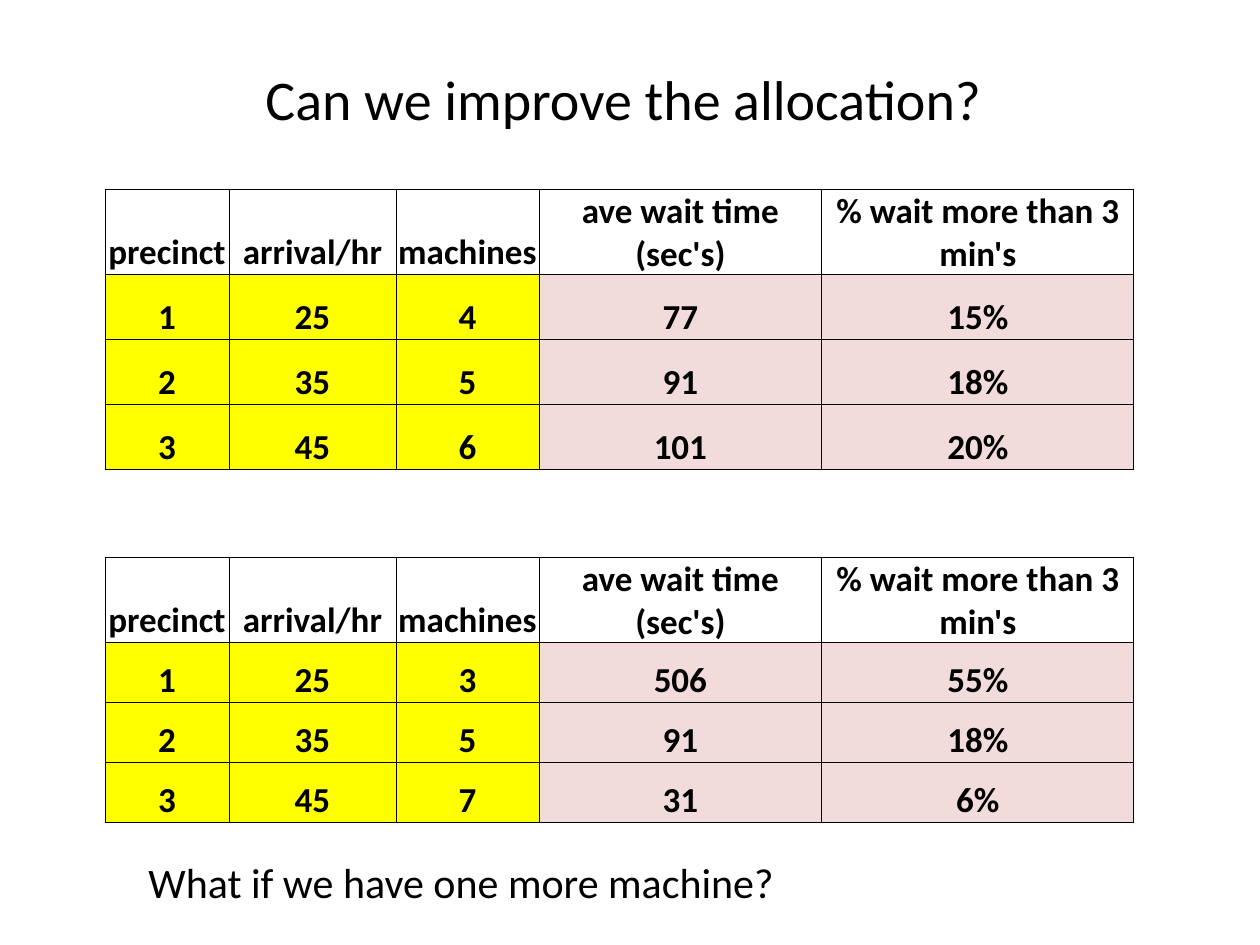
"""Build a slide comparing two allocations of voting machines."""
import pptx
import pptx.dml.color
import pptx.enum.text
import pptx.oxml
import pptx.oxml.ns
import pptx.util

PX = 914400 / 126
HUES = {"ink": "000000", "given": "FFFF00", "found": "F2DCDB"}
ALIGN = pptx.enum.text.PP_ALIGN
ANCHOR = pptx.enum.text.MSO_ANCHOR


def px(*nums):
    """Turn pixels into EMU."""
    return [pptx.util.Emu(round(num * PX)) for num in nums]


def write(frame, text, size, bold=False, align=ALIGN.CENTER):
    """Put one formatted line of text in a frame."""
    para = frame.paragraphs[0]
    para.alignment = align
    run = para.add_run()
    run.text = text
    look = {"name": "Calibri", "size": pptx.util.Pt(size), "bold": bold}
    for key, val in look.items():
        setattr(run.font, key, val)
    run.font.color.rgb = pptx.dml.color.RGBColor.from_string(HUES["ink"])


deck = pptx.Presentation()
deck.slide_width, deck.slide_height = px(1260, 945)
slide = deck.slides.add_slide(deck.slide_layouts[5])

title = slide.shapes.title
title.left, title.top, title.width, title.height = px(63, 38, 1134, 120)
title.text_frame.vertical_anchor = ANCHOR.MIDDLE
write(title.text_frame, "Can we improve the allocation? ", 32)

note = slide.shapes.add_textbox(*px(136, 850, 777, 63))
note.text_frame.word_wrap = True
write(note.text_frame, "What if we have one more machine?", 24, align=ALIGN.LEFT)

heads = ["precinct", "arrival/hr", "machines", "ave wait time (sec's)",
         "% wait more than 3 min's"]
widths = [124, 167, 143, 283, 312]
head_high = 85
plans = [
    (189, 65, [["1", "25", "4", "77", "15%"],
               ["2", "35", "5", "91", "18%"],
               ["3", "45", "6", "101", "20%"]]),
    (557, 60, [["1", "25", "3", "506", "55%"],
               ["2", "35", "5", "91", "18%"],
               ["3", "45", "7", "31", "6%"]]),
]
edge, foot = px(1, 0)
inset = {"margin_left": edge, "margin_right": edge, "margin_top": edge,
         "margin_bottom": foot, "vertical_anchor": ANCHOR.BOTTOM}
line = ('<a:{} {} w="6350"><a:solidFill><a:srgbClr val="{}"/>'
        '</a:solidFill></a:{}>')

for top, high, rows in plans:
    full = head_high + high * len(rows)
    size = px(105, top, sum(widths), full)
    grid = slide.shapes.add_table(len(rows) + 1, len(heads), *size).table
    grid.first_row = grid.horz_banding = False
    for col, width in zip(grid.columns, px(*widths)):
        col.width = width
    for row, tall in zip(grid.rows, px(head_high, *[high] * len(rows))):
        row.height = tall
    for r, texts in enumerate([heads] + rows):
        for c, text in enumerate(texts):
            cell = grid.cell(r, c)
            for key, val in inset.items():
                setattr(cell, key, val)
            write(cell.text_frame, text, 20, bold=True)
            if r == 0:
                cell.fill.background()
            else:
                cell.fill.solid()
                hue = HUES["given" if c < 3 else "found"]
                cell.fill.fore_color.rgb = pptx.dml.color.RGBColor.from_string(hue)
            props = cell._tc.get_or_add_tcPr()
            for spot, side in enumerate(["lnL", "lnR", "lnT", "lnB"]):
                xml = line.format(side, pptx.oxml.ns.nsdecls("a"), HUES["ink"], side)
                props.insert(spot, pptx.oxml.parse_xml(xml))

deck.save("out.pptx")
